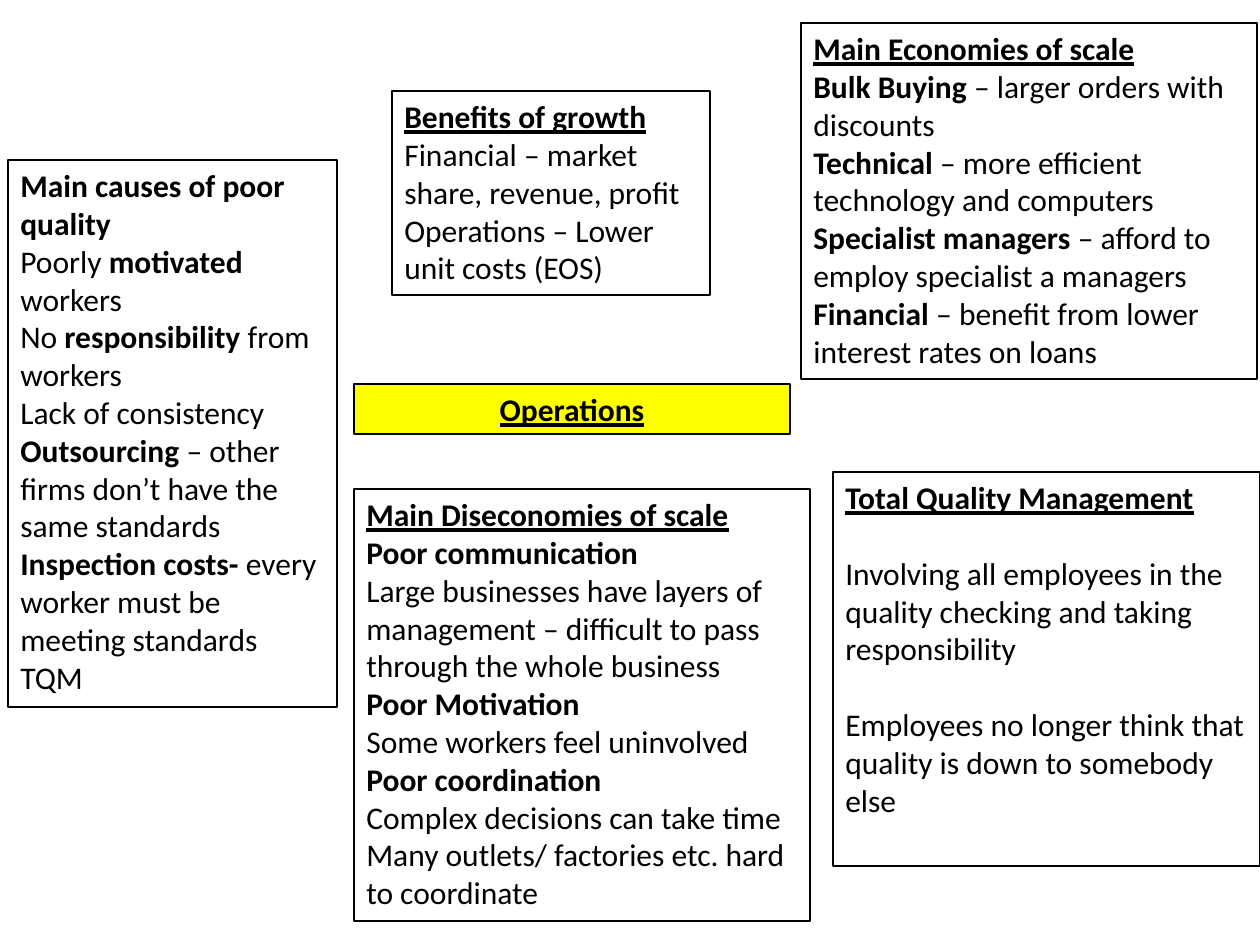
"""Build the Operations revision slide of bordered text boxes."""
from pptx import Presentation
from pptx.dml.color import RGBColor
from pptx.enum.shapes import MSO_SHAPE
from pptx.enum.text import MSO_ANCHOR, MSO_AUTO_SIZE, PP_ALIGN
from pptx.util import Pt

RECT = MSO_SHAPE.RECTANGLE
LEFT, MID = PP_ALIGN.LEFT, PP_ALIGN.CENTER
SCALE = 914400 / 126
COLORS = {"ink": "000000", "mark": "FFFF00"}
FONT = {"name": "Calibri", "size": Pt(18)}
FRAME = {
    "word_wrap": True,
    "auto_size": MSO_AUTO_SIZE.NONE,
    "vertical_anchor": MSO_ANCHOR.TOP,
}
GAP = Pt(21.6)

BENEFITS = [
    "Financial – market share, revenue, profit",
    "Operations – Lower unit costs (EOS)",
]
SCALE_UP = [
    "*Bulk Buying *– larger orders with discounts",
    "*Technical* – more efficient technology and computers",
    "*Specialist managers *– afford to employ specialist a managers",
    "*Financial* – benefit from lower interest rates on loans",
]
SCALE_DOWN = [
    "*Poor communication*",
    "Large businesses have layers of management – difficult to pass "
    "through the whole business",
    "*Poor Motivation*",
    "Some workers feel uninvolved",
    "*Poor coordination*",
    "Complex decisions can take time",
    "Many outlets/ factories etc. hard to coordinate",
]
CAUSES = [
    "Poorly *motivated* workers",
    "No *responsibility* from workers",
    "Lack of consistency",
    "*Outsourcing *– other firms don’t have the same standards",
    "*Inspection costs- *every worker must be meeting standards TQM",
]
QUALITY = [
    "Involving all employees in the quality checking and taking responsibility",
    "Employees no longer think that quality is down to somebody else",
]


def px(num):
    """Turn px into EMU."""
    return round(num * SCALE)


def tint(name):
    """Look up a colour by name."""
    return RGBColor.from_string(COLORS[name])


def apply(item, style):
    """Set each attribute of item from a dict."""
    for key, value in style.items():
        setattr(item, key, value)


def write(para, text, line=False, align=LEFT, gap=0):
    """Fill a paragraph, with starred parts in bold."""
    apply(para, {"alignment": align, "space_before": gap})
    for i, part in enumerate(text.split("*")):
        if part:
            run = para.add_run()
            run.text = part
            apply(run.font, {**FONT, "bold": i % 2 == 1, "underline": line})
            run.font.color.rgb = tint("ink")


def box(slide, area, title, lines=(), line=True, fill=None, align=LEFT, gap=0):
    """Draw a bordered box with a bold title and body lines."""
    shape = slide.shapes.add_shape(RECT, *map(px, area))
    shape.shadow.inherit = False
    shape.line.color.rgb = tint("ink")
    shape.line.width = Pt(0.75)
    if fill:
        shape.fill.solid()
        shape.fill.fore_color.rgb = tint(fill)
    else:
        shape.fill.background()
    frame = shape.text_frame
    apply(frame, FRAME)
    write(frame.paragraphs[0], f"*{title}*", line, align)
    for text in lines:
        write(frame.add_paragraph(), text, align=align, gap=gap)


def main():
    """Build and save the slide."""
    deck = Presentation()
    apply(deck, {"slide_width": px(1260), "slide_height": px(945)})
    slide = deck.slides.add_slide(deck.slide_layouts[6])
    box(slide, (354, 384, 436, 50), "Operations", fill="mark", align=MID)
    box(slide, (392, 91, 318, 204), "Benefits of growth", BENEFITS)
    box(slide, (801, 23, 456, 356), "Main Economies of scale", SCALE_UP)
    box(slide, (354, 489, 456, 432), "Main Diseconomies of scale", SCALE_DOWN)
    box(slide, (8, 160, 329, 547), "Main causes of poor quality", CAUSES, line=False)
    box(slide, (833, 472, 427, 394), "Total Quality Management", QUALITY, gap=GAP)
    deck.save("out.pptx")


if __name__ == "__main__":
    main()
